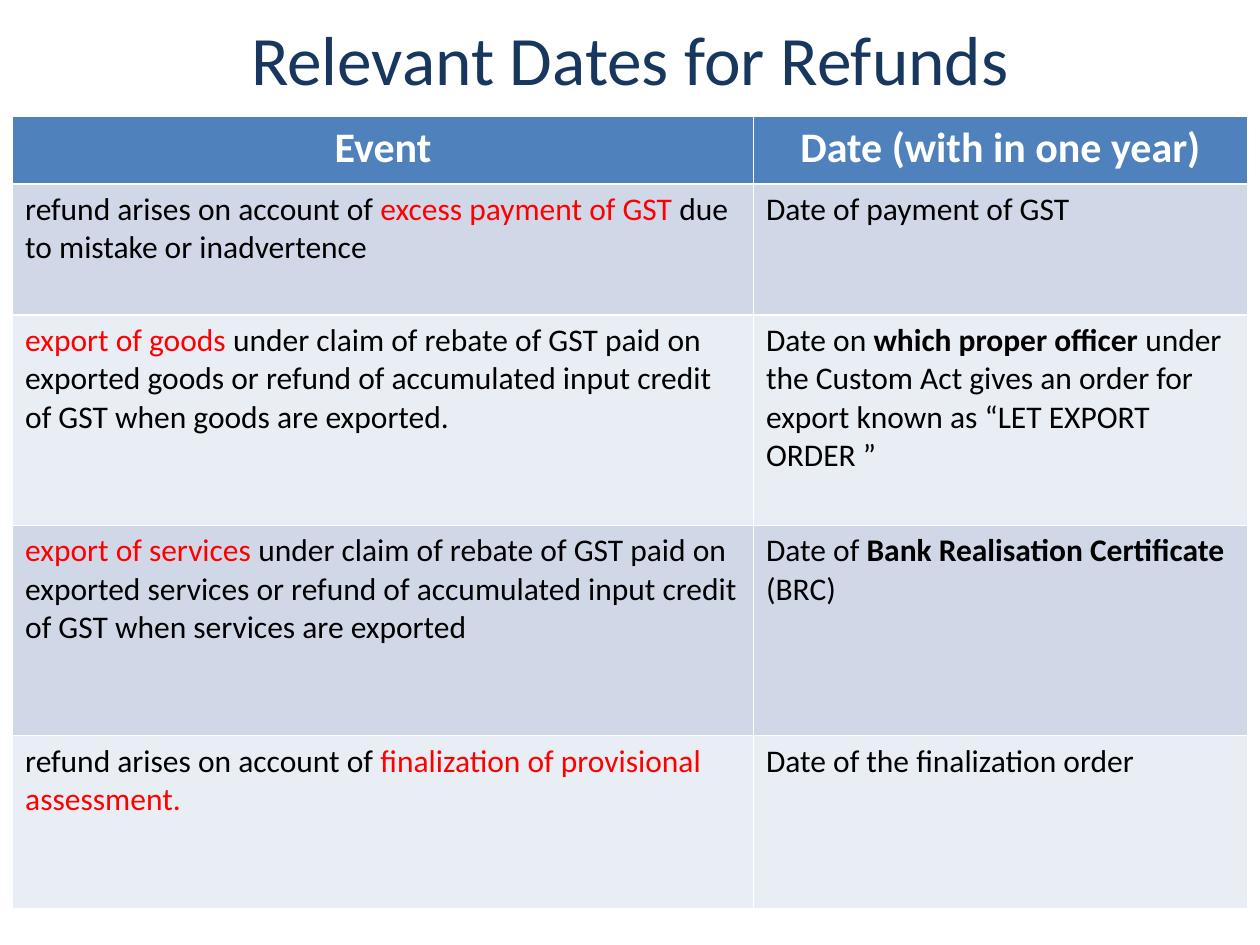
from pptx import Presentation
from pptx.dml.color import RGBColor
from pptx.enum.text import MSO_ANCHOR, PP_ALIGN
from pptx.util import Inches, Pt

NAVY = RGBColor(0x17, 0x37, 0x5E)
BLUE = RGBColor(0x4F, 0x81, 0xBD)
BANDS = [RGBColor(0xD0, 0xD8, 0xE8), RGBColor(0xE9, 0xED, 0xF4)]
WHITE = RGBColor(0xFF, 0xFF, 0xFF)
BLACK = RGBColor(0, 0, 0)
RED = RGBColor(0xFF, 0, 0)
FONT = "Calibri"

PLAIN, KEY, STRONG = "plain", "key", "strong"
RUN_STYLES = {PLAIN: (BLACK, False), KEY: (RED, False), STRONG: (BLACK, True)}

TITLE = "Relevant Dates for Refunds"
HEADERS = ["Event", "Date (with in one year)"]
ROWS = [
    (
        [("refund arises on account of ", PLAIN), ("excess payment of GST ", KEY),
         ("due to mistake or inadvertence", PLAIN)],
        [("Date of payment of GST", PLAIN)],
    ),
    (
        [("export of goods ", KEY),
         ("under claim of rebate of GST paid on exported goods or refund of "
          "accumulated input credit of GST when goods are exported.", PLAIN)],
        [("Date on ", PLAIN), ("which proper officer ", STRONG),
         ("under the Custom Act gives an order for export known as "
          "“LET EXPORT ORDER ”", PLAIN)],
    ),
    (
        [("export of services ", KEY),
         ("under claim of rebate of GST paid on exported services or refund of "
          "accumulated input credit of GST when services are exported", PLAIN)],
        [("Date of ", PLAIN), ("Bank Realisation Certificate ", STRONG), ("(BRC)", PLAIN)],
    ),
    (
        [("refund arises on account of ", PLAIN),
         ("finalization of provisional assessment.", KEY)],
        [("Date of the finalization order", PLAIN)],
    ),
]
COLUMN_WIDTHS = [5.88, 3.92]
ROW_HEIGHTS = [0.54, 1.04, 1.67, 1.67, 1.37]


def style_font(font, size, color, bold=False):
    font.name = FONT
    font.size = Pt(size)
    font.bold = bold
    font.color.rgb = color


def fill_cell(cell, color):
    cell.fill.solid()
    cell.fill.fore_color.rgb = color
    return cell.text_frame.paragraphs[0]


def add_title(slide):
    box = slide.shapes.add_textbox(Inches(0.75), Inches(0.17), Inches(8.5), Inches(0.58))
    frame = box.text_frame
    frame.word_wrap = True
    frame.vertical_anchor = MSO_ANCHOR.MIDDLE
    paragraph = frame.paragraphs[0]
    paragraph.text = TITLE
    paragraph.alignment = PP_ALIGN.CENTER
    style_font(paragraph.font, 39.6, NAVY)


def add_refund_table(slide):
    table = slide.shapes.add_table(
        len(ROW_HEIGHTS), len(COLUMN_WIDTHS), Inches(0.1), Inches(0.92),
        Inches(sum(COLUMN_WIDTHS)), Inches(sum(ROW_HEIGHTS))).table
    for column, width in zip(table.columns, COLUMN_WIDTHS):
        column.width = Inches(width)
    for row, height in zip(table.rows, ROW_HEIGHTS):
        row.height = Inches(height)
    for column_index, header in enumerate(HEADERS):
        paragraph = fill_cell(table.cell(0, column_index), BLUE)
        paragraph.text = header
        paragraph.alignment = PP_ALIGN.CENTER
        style_font(paragraph.font, 24, WHITE, True)
    for row_index, row_content in enumerate(ROWS):
        for column_index, runs in enumerate(row_content):
            cell = table.cell(row_index + 1, column_index)
            paragraph = fill_cell(cell, BANDS[row_index % 2])
            for text, style in runs:
                run = paragraph.add_run()
                run.text = text
                style_font(run.font, 18, *RUN_STYLES[style])


def main():
    presentation = Presentation()
    presentation.slide_width = Inches(10)
    presentation.slide_height = Inches(7.5)
    slide = presentation.slides.add_slide(presentation.slide_layouts[6])
    add_title(slide)
    add_refund_table(slide)
    presentation.save("out.pptx")


if __name__ == "__main__":
    main()
